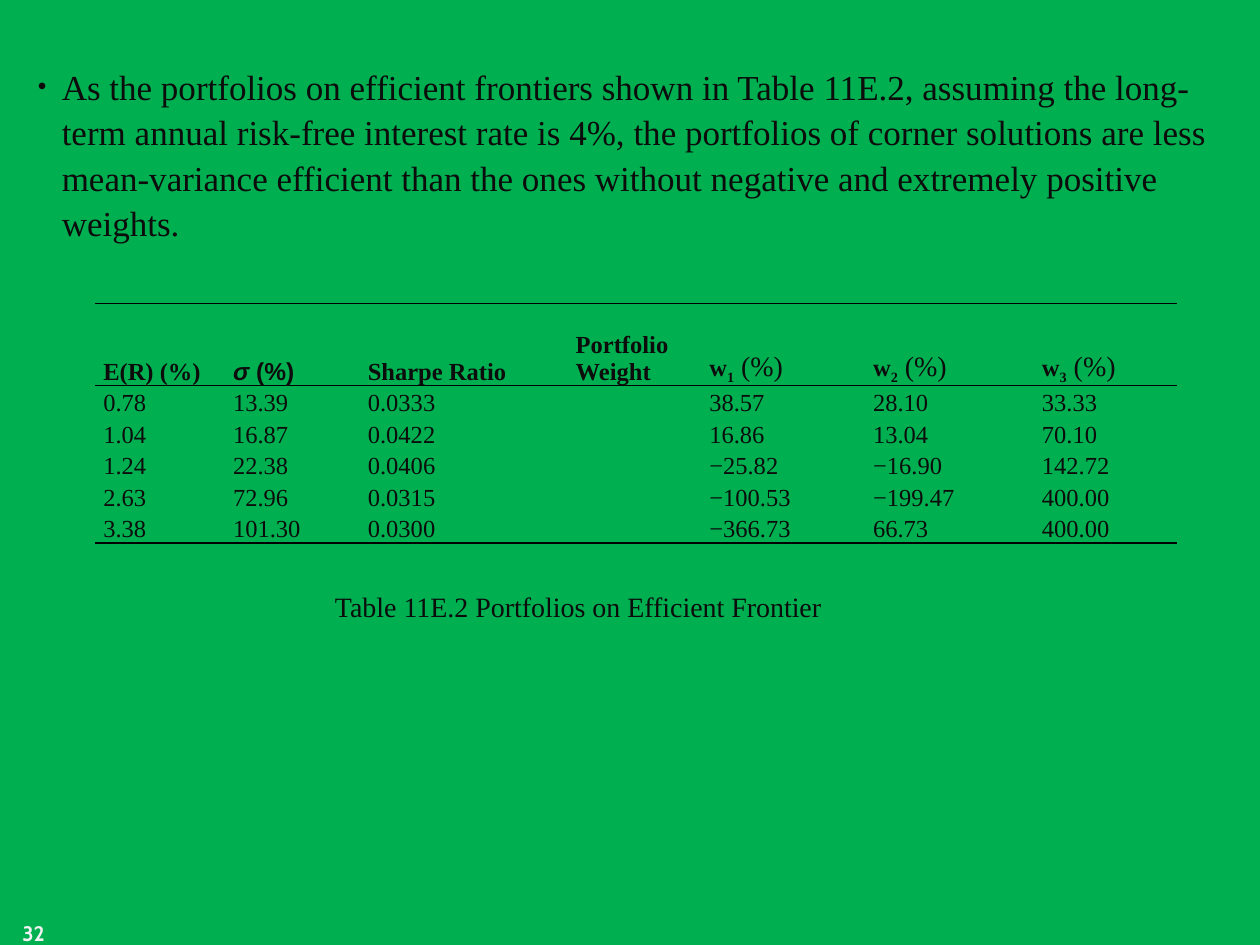
from dataclasses import dataclass

from lxml import etree
from pptx import Presentation
from pptx.dml.color import RGBColor
from pptx.enum.text import MSO_ANCHOR, PP_ALIGN
from pptx.oxml.ns import qn
from pptx.util import Emu, Inches, Pt

BOTTOM, MIDDLE = MSO_ANCHOR.BOTTOM, MSO_ANCHOR.MIDDLE
JUSTIFY = PP_ALIGN.JUSTIFY
COLORS = {"background": "00B050", "text": "0C0C0C", "rule": "000000", "number": "F2F2F2"}
SERIF = "Times New Roman"
NO_STYLE_NO_GRID = "{2D5ABB26-0587-4C30-8999-92F81FD0307C}"


@dataclass
class Piece:
    """A stretch of text in one format."""
    text: str
    size: int = 14
    bold: bool = False
    italic: bool = False
    font: str = SERIF
    color: str = "text"
    subscript: bool = False


def bold(text: str) -> list[Piece]:
    return [Piece(text, bold=True)]


def weight(index: int) -> list[Piece]:
    return [Piece("w", bold=True), Piece(str(index), bold=True, subscript=True),
            Piece(" (%)", size=16)]


BODY = ("As the portfolios on efficient frontiers shown in Table 11E.2, assuming the "
        "long-term annual risk-free interest rate is 4%, the portfolios of corner solutions "
        "are less mean-variance efficient than the ones without negative and extremely "
        "positive weights.")
HEADER = [
    bold("E(R) (%)"),
    [Piece("σ", bold=True, italic=True, font="Arial"), Piece(" (%)", bold=True, font="Arial")],
    bold("Sharpe Ratio"), bold("Portfolio Weight"), weight(1), weight(2), weight(3),
]
VALUES = [
    ["0.78", "13.39", "0.0333", "", "38.57", "28.10", "33.33"],
    ["1.04", "16.87", "0.0422", "", "16.86", "13.04", "70.10"],
    ["1.24", "22.38", "0.0406", "", "−25.82", "−16.90", "142.72"],
    ["2.63", "72.96", "0.0315", "", "−100.53", "−199.47", "400.00"],
    ["3.38", "101.30", "0.0300", "", "−366.73", "66.73", "400.00"],
]
COLUMN_WIDTHS = [1.03, 1.07, 1.65, 1.06, 1.3, 1.34, 1.14]
HEADER_HEIGHT, ROW_HEIGHT = 0.65, 0.25


def write(para, pieces: list[Piece]) -> None:
    for piece in pieces:
        span = para.add_run()
        span.text = piece.text
        span.font.size = Pt(piece.size)
        span.font.name = piece.font
        span.font.bold = piece.bold
        span.font.italic = piece.italic
        span.font.color.rgb = RGBColor.from_string(COLORS[piece.color])
        if piece.subscript:
            span.font._element.set("baseline", "-25000")


def set_borders(cell, ruled: set[str]) -> None:
    """Rule the given sides (T, B) of a cell and leave the others bare."""
    properties = cell._tc.get_or_add_tcPr()
    for side in "LRTB":
        line = etree.SubElement(properties, qn(f"a:ln{side}"), w=str(Pt(1)))
        if side in ruled:
            fill = etree.SubElement(line, qn("a:solidFill"))
            etree.SubElement(fill, qn("a:srgbClr"), val=COLORS["rule"])
        else:
            etree.SubElement(line, qn("a:noFill"))


def fill_cell(cell, pieces: list[Piece], ruled: set[str]) -> None:
    cell.margin_left = cell.margin_right = Inches(0.07)
    cell.margin_top = cell.margin_bottom = Emu(0)
    cell.vertical_anchor = BOTTOM
    set_borders(cell, ruled)
    cell.fill.background()
    para = cell.text_frame.paragraphs[0]
    para.alignment = JUSTIFY
    write(para, pieces)
    if not pieces:
        etree.SubElement(para._p, qn("a:endParaRPr"), sz="1400")


def add_portfolio_table(slide) -> None:
    rows = [HEADER] + [[[Piece(value)] if value else [] for value in row] for row in VALUES]
    heights = [HEADER_HEIGHT] + [ROW_HEIGHT] * len(VALUES)
    table = slide.shapes.add_table(
        len(rows), len(COLUMN_WIDTHS), Inches(0.75), Inches(2.41),
        Inches(sum(COLUMN_WIDTHS)), Inches(sum(heights))).table
    table.first_row = table.horz_banding = False
    table._tbl.tblPr.find(qn("a:tableStyleId")).text = NO_STYLE_NO_GRID
    for column, width in zip(table.columns, COLUMN_WIDTHS):
        column.width = Inches(width)
    rules = {0: {"T", "B"}, 1: {"T"}, len(VALUES): {"B"}}
    for r, (row, height) in enumerate(zip(rows, heights)):
        table.rows[r].height = Inches(height)
        for c, pieces in enumerate(row):
            fill_cell(table.cell(r, c), pieces, rules.get(r, set()))


def format_body(body) -> None:
    body.left, body.top = Inches(0.2), Inches(0.44)
    body.width, body.height = Inches(9.61), Inches(6.61)
    para = body.text_frame.paragraphs[0]
    para.line_spacing = Pt(26)
    para.space_before = Pt(0)
    properties = para._p.get_or_add_pPr()
    properties.set("marL", str(Inches(0.19)))
    properties.set("indent", str(-Inches(0.19)))
    etree.SubElement(properties, qn("a:buSzPct"), val="70000")
    etree.SubElement(properties, qn("a:buChar"), char="•")
    write(para, [Piece(BODY, size=20)])


def add_label(slide, left: float, top: float, width: float, height: float,
              piece: Piece, anchor=None) -> None:
    box = slide.shapes.add_textbox(Inches(left), Inches(top), Inches(width), Inches(height))
    box.text_frame.word_wrap = True
    box.text_frame.vertical_anchor = anchor
    write(box.text_frame.paragraphs[0], [piece])


def main() -> None:
    deck = Presentation()
    deck.slide_width, deck.slide_height = Inches(10), Inches(7.5)
    slide = deck.slides.add_slide(deck.slide_layouts[1])
    slide.background.fill.solid()
    slide.background.fill.fore_color.rgb = RGBColor.from_string(COLORS["background"])

    title = slide.shapes.title._element
    title.getparent().remove(title)
    format_body(slide.placeholders[1])
    add_portfolio_table(slide)
    add_label(slide, 2.56, 4.62, 4.49, 0.39,
              Piece("Table 11E.2 Portfolios on Efficient Frontier", size=16), MIDDLE)
    add_label(slide, 0.08, 7.26, 2.33, 0.4,
              Piece("32", size=12, bold=True, font="Cabin", color="number"))
    deck.save("out.pptx")


if __name__ == "__main__":
    main()
